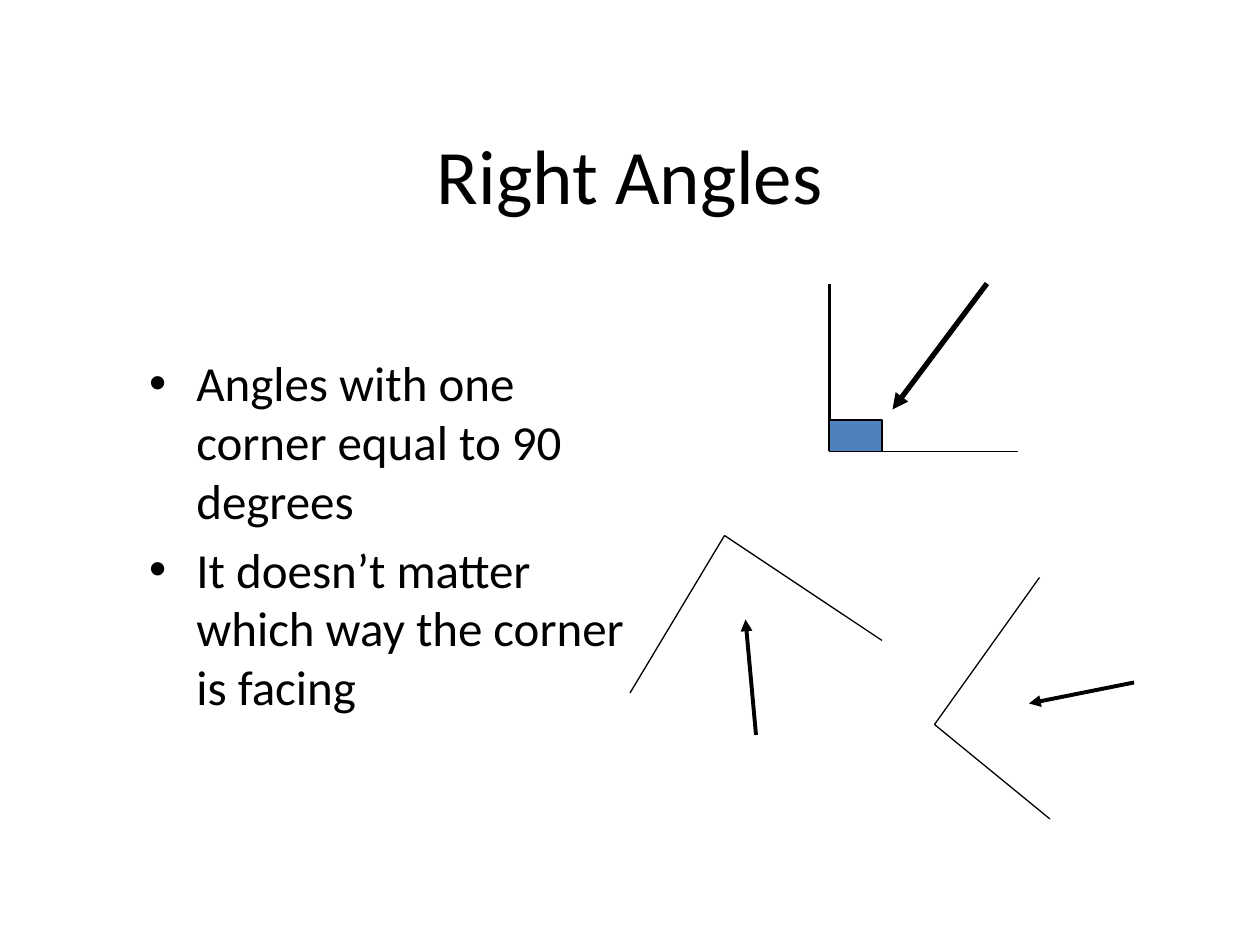
from lxml.etree import SubElement
from pptx import Presentation
from pptx.dml.color import RGBColor
from pptx.enum.shapes import MSO_CONNECTOR, MSO_SHAPE
from pptx.enum.text import MSO_ANCHOR, PP_ALIGN
from pptx.oxml.ns import qn
from pptx.util import Pt

BLACK = RGBColor(0x00, 0x00, 0x00)
BLUE = RGBColor(0x4F, 0x81, 0xBD)
FONT = "Calibri"


def place_text(shape, left, top, width, height, lines, size):
    shape.left, shape.top = Pt(left), Pt(top)
    shape.width, shape.height = Pt(width), Pt(height)
    shape.text_frame.text = "\n".join(lines)
    for paragraph in shape.text_frame.paragraphs:
        for run in paragraph.runs:
            run.font.name = FONT
            run.font.size = Pt(size)
            run.font.color.rgb = BLACK


def add_line(start, end, width, arrow=False):
    connector = slide.shapes.add_connector(
        MSO_CONNECTOR.STRAIGHT, *(Pt(value) for value in start + end))
    connector.line.color.rgb = BLACK
    connector.line.width = Pt(width)
    if arrow:
        SubElement(connector.line._get_or_add_ln(), qn("a:tailEnd"), type="triangle")
    SubElement(connector._element.spPr, qn("a:effectLst"))


presentation = Presentation()
presentation.slide_width, presentation.slide_height = Pt(720), Pt(540)
slide = presentation.slides.add_slide(presentation.slide_layouts[1])

title, body = slide.placeholders
place_text(title, 54, 54, 612, 90, ["Right Angles"], 44)
title.text_frame.vertical_anchor = MSO_ANCHOR.MIDDLE
title.text_frame.paragraphs[0].alignment = PP_ALIGN.CENTER

place_text(body, 78, 198, 300, 300, [
    "Angles with one corner equal to 90 degrees",
    "It doesn’t matter which way the corner is facing",
], 28)

# Each angle: end of first side, corner, end of second side, side widths
angles = [
    ((474, 162), (474, 258), (582, 258), 1.5, 0.75),
    ((360, 396), (414, 306), (504, 366), 0.75, 0.75),
    ((594, 330), (534, 414), (600, 468), 0.75, 0.75),
]
for first_end, corner, second_end, first_width, second_width in angles:
    add_line(first_end, corner, first_width)
    add_line(corner, second_end, second_width)

corner_mark = slide.shapes.add_shape(MSO_SHAPE.RECTANGLE, Pt(474), Pt(240), Pt(30), Pt(18))
corner_mark.shadow.inherit = False
corner_mark.fill.solid()
corner_mark.fill.fore_color.rgb = BLUE
corner_mark.line.color.rgb = BLACK
corner_mark.line.width = Pt(0.75)

arrows = [
    ((564, 162), (510, 234), 3),
    ((432, 420), (426, 354), 2.25),
    ((648, 390), (588, 402), 2.25),
]
for start, tip, width in arrows:
    add_line(start, tip, width, arrow=True)

presentation.save("out.pptx")
